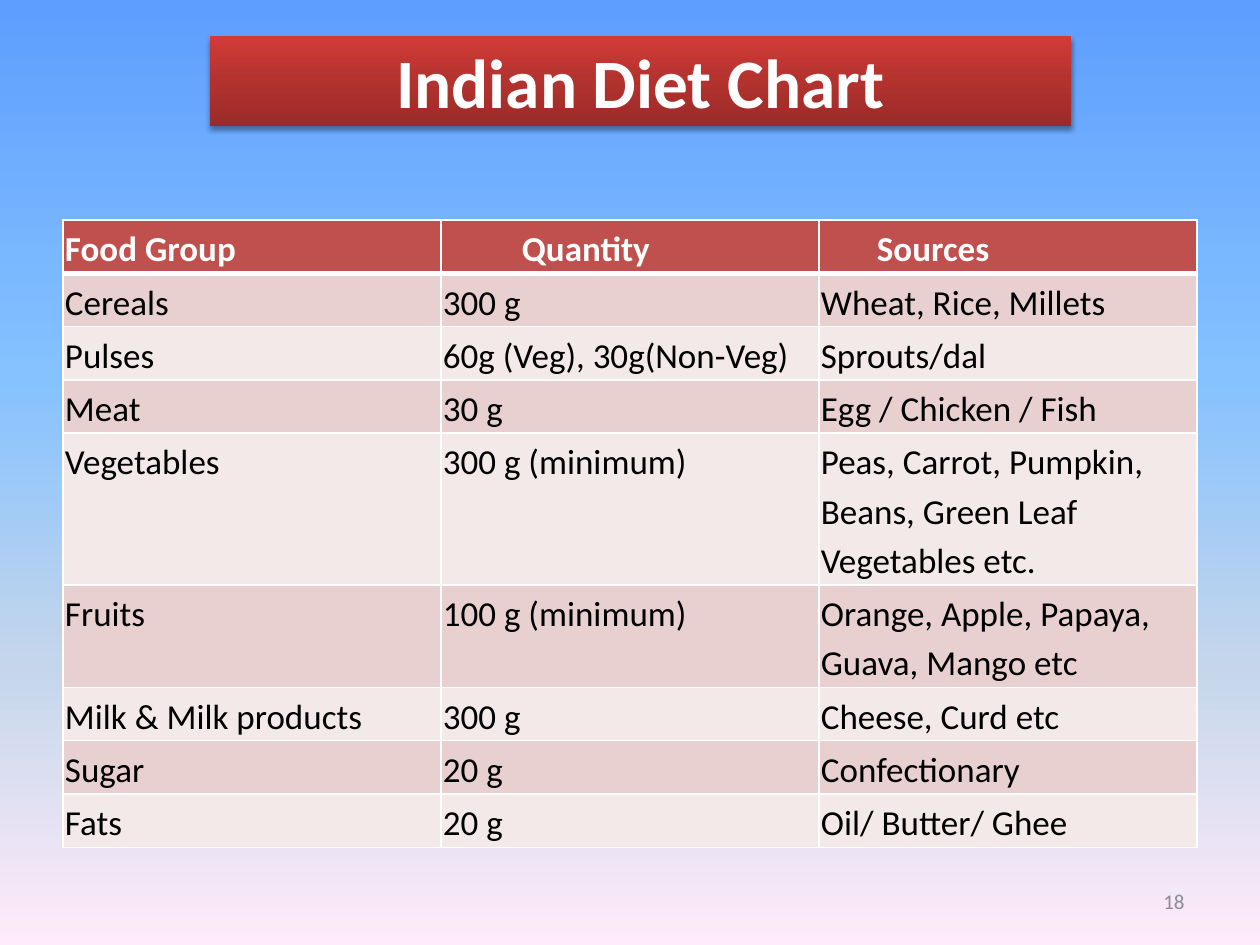
from lxml import etree
from pptx import Presentation
from pptx import util as u
from pptx.dml.color import RGBColor
from pptx.enum import shapes, text
from pptx.oxml.ns import qn

PX = u.Inches(1) // 126
COLORS = {
    "white": "FFFFFF", "black": "000000", "number": "8C8C8C",
    "header": "C0504D", "odd": "E8D0D0", "even": "F4E9E9",
}
SKY = [(0, "5E9EFF"), (40, "85C2FF"), (70, "C4D6EB"), (100, "FFEBFA")]
RED = [(0, "9A2B28"), (55, "B5332F"), (100, "D33B37")]

HEADINGS = ["Food Group", "Quantity", "Sources"]
HEADING_INDENTS = [0, 79, 56]
FOODS = [
    ["Cereals", "300 g", "Wheat, Rice, Millets"],
    ["Pulses", "60g (Veg), 30g(Non-Veg)", "Sprouts/dal"],
    ["Meat", "30 g", "Egg / Chicken / Fish"],
    ["Vegetables", "300 g (minimum)",
     "Peas, Carrot, Pumpkin, Beans, Green Leaf Vegetables etc."],
    ["Fruits", "100 g (minimum)", "Orange, Apple, Papaya, Guava, Mango etc"],
    ["Milk & Milk products", "300 g", "Cheese, Curd etc"],
    ["Sugar", "20 g", "Confectionary"],
    ["Fats", "20 g", "Oil/ Butter/ Ghee"],
]


def add_node(parent, tag, **attributes):
    return etree.SubElement(parent, qn(tag),
                            {key: str(value) for key, value in attributes.items()})


class Painter:
    font = "Calibri"

    def __init__(self, page):
        self.page = page

    def gradient(self, fill, element, stops, angle):
        fill.gradient()
        fill.gradient_angle = angle
        stop_list = element.find(".//" + qn("a:gsLst"))
        for old in list(stop_list):
            stop_list.remove(old)
        for position, color in stops:
            stop = add_node(stop_list, "a:gs", pos=position * 1000)
            add_node(stop, "a:srgbClr", val=color)

    def background(self, stops):
        self.gradient(self.page.background.fill, self.page.element, stops, 270)

    def set_text(self, frame, words, size, color, bold=False, align=None):
        frame.text = words
        frame.word_wrap = True
        para = frame.paragraphs[0]
        para.alignment = align
        span = para.runs[0]
        span.font.name = self.font
        span.font.size = u.Pt(size)
        span.font.bold = bold
        span.font.color.rgb = RGBColor.from_string(COLORS[color])
        return para

    def banner(self, area, words, stops):
        box = self.page.shapes.add_shape(
            shapes.MSO_SHAPE.RECTANGLE, *[side * PX for side in area])
        self.gradient(box.fill, box.element, stops, 90)
        box.line.fill.background()
        # Soft shadow straight below
        box.shadow.inherit = False
        effects = box.element.spPr.find(qn("a:effectLst"))
        shadow = add_node(effects, "a:outerShdw", blurRad=u.Pt(3.1), dist=u.Pt(2),
                          dir=5400000, rotWithShape=0)
        tint = add_node(shadow, "a:srgbClr", val=COLORS["black"])
        add_node(tint, "a:alpha", val=38000)
        box.text_frame.vertical_anchor = text.MSO_ANCHOR.MIDDLE
        self.set_text(box.text_frame, words, 39.6, "white", True,
                      text.PP_ALIGN.CENTER)

    def label(self, area, words, size, color, align):
        box = self.page.shapes.add_textbox(*[side * PX for side in area])
        box.text_frame.vertical_anchor = text.MSO_ANCHOR.MIDDLE
        self.set_text(box.text_frame, words, size, color, align=align)

    def borders(self, cell, top, bottom):
        properties = cell._tc.get_or_add_tcPr()
        for side, width in zip("LRTB", (1, 1, top, bottom)):
            line = add_node(properties, "a:ln" + side, w=u.Pt(width))
            add_node(add_node(line, "a:solidFill"), "a:srgbClr", val=COLORS["white"])

    def cell(self, cell, words, row, indent=0):
        header = row == 0
        cell.margin_left = cell.margin_right = 2 * PX
        cell.margin_top = cell.margin_bottom = 2 * PX
        self.borders(cell, 3 if row == 1 else 1, 3 if header else 1)
        cell.fill.solid()
        band = "header" if header else "odd" if row % 2 else "even"
        cell.fill.fore_color.rgb = RGBColor.from_string(COLORS[band])
        para = self.set_text(cell.text_frame, words, 20,
                             "white" if header else "black", header)
        para.line_spacing = 1.15
        if indent:
            para._p.get_or_add_pPr().set("marL", str(indent * PX))

    def table(self, left, top, column_width, row_height, rows, indents):
        columns = len(rows[0])
        grid = self.page.shapes.add_table(
            len(rows), columns, left * PX, top * PX,
            columns * column_width * PX, len(rows) * row_height * PX).table
        for r, row in enumerate(rows):
            for c, words in enumerate(row):
                self.cell(grid.cell(r, c), words, r, 0 if r else indents[c])


def main():
    deck = Presentation()
    deck.slide_width, deck.slide_height = 1260 * PX, 945 * PX
    painter = Painter(deck.slides.add_slide(deck.slide_layouts[6]))

    # Background and title
    painter.background(SKY)
    painter.banner((210, 36, 861, 90), "Indian Diet Chart", RED)

    # Diet table
    painter.table(63, 220, 378, 52, [HEADINGS] + FOODS, HEADING_INDENTS)

    # Slide number
    painter.label((903, 876, 294, 50), "18", 12, "number", text.PP_ALIGN.RIGHT)

    deck.save("out.pptx")


if __name__ == "__main__":
    main()
